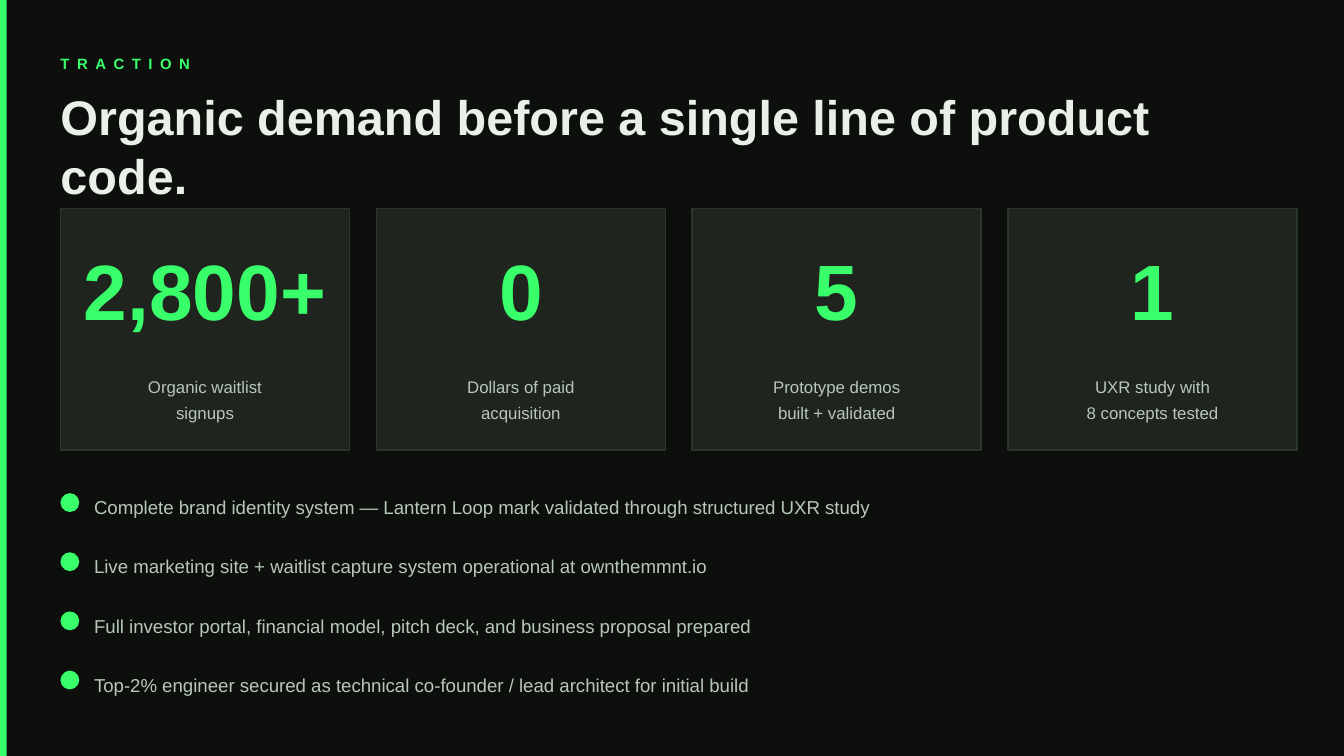
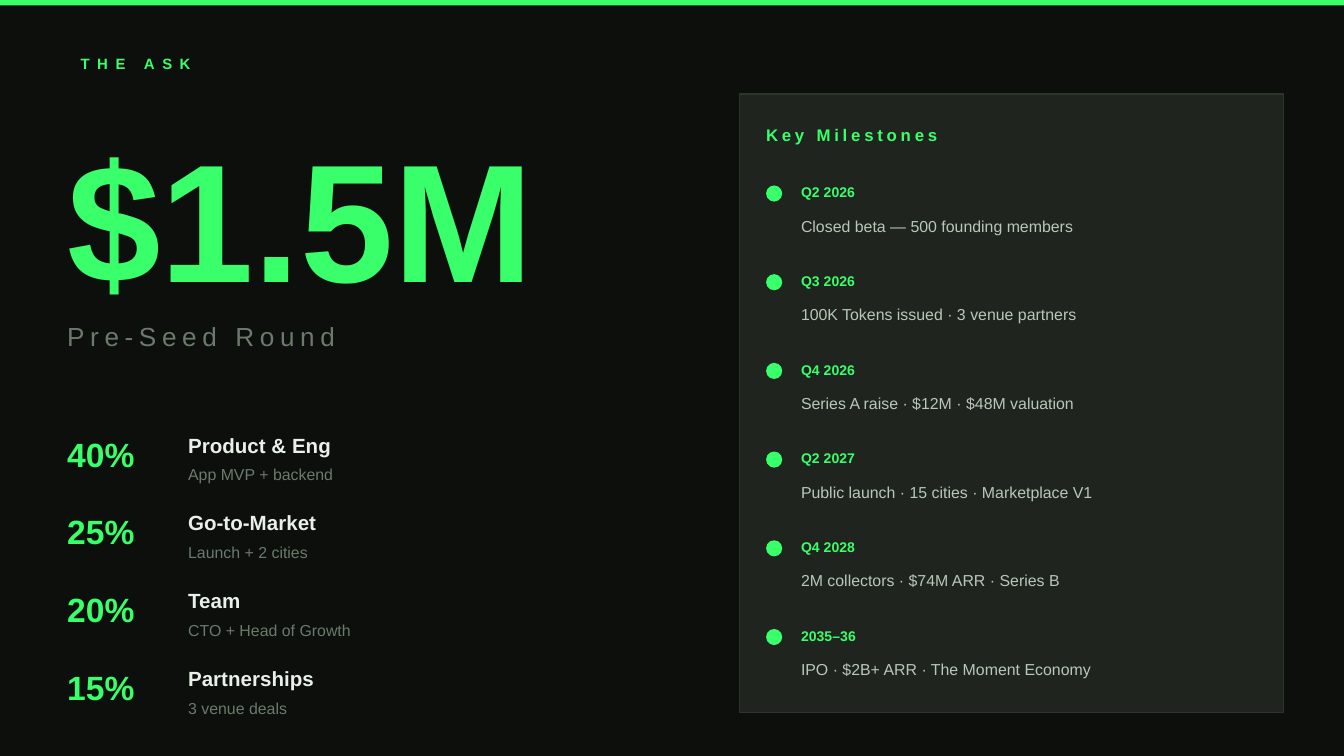
from pptx import Presentation
from pptx.dml.color import RGBColor
from pptx.enum.shapes import MSO_SHAPE
from pptx.enum.text import MSO_ANCHOR, MSO_AUTO_SIZE, PP_ALIGN
from pptx.util import Inches, Pt

NIGHT = RGBColor(0x0C, 0x0F, 0x0C)
PANEL = RGBColor(0x1F, 0x24, 0x1F)
EDGE = RGBColor(0x2A, 0x36, 0x2A)
GREEN = RGBColor(0x39, 0xFF, 0x6A)
WHITE = RGBColor(0xE8, 0xF0, 0xE8)
SAGE = RGBColor(0xB8, 0xC8, 0xB8)
MOSS = RGBColor(0x6B, 0x7A, 0x6B)

FONT = "Arial"
WIDE, HIGH = 100, 56.25
UNIT = Inches(10) / WIDE

STATS = [
    ("2,800+", "Organic waitlist\nsignups"),
    ("0", "Dollars of paid\nacquisition"),
    ("5", "Prototype demos\nbuilt + validated"),
    ("1", "UXR study with\n8 concepts tested"),
]
PROOFS = [
    "Complete brand identity system — Lantern Loop mark validated through structured UXR study",
    "Live marketing site + waitlist capture system operational at ownthemmnt.io",
    "Full investor portal, financial model, pitch deck, and business proposal prepared",
    "Top-2% engineer secured as technical co-founder / lead architect for initial build",
]
FUNDS = [
    ("40%", "Product & Eng", "App MVP + backend"),
    ("25%", "Go-to-Market", "Launch + 2 cities"),
    ("20%", "Team", "CTO + Head of Growth"),
    ("15%", "Partnerships", "3 venue deals"),
]
GOALS = [
    ("Q2 2026", "Closed beta — 500 founding members"),
    ("Q3 2026", "100K Tokens issued · 3 venue partners"),
    ("Q4 2026", "Series A raise · $12M · $48M valuation"),
    ("Q2 2027", "Public launch · 15 cities · Marketplace V1"),
    ("Q4 2028", "2M collectors · $74M ARR · Series B"),
    ("2035–36", "IPO · $2B+ ARR · The Moment Economy"),
]


def grid(*cells):
    """Turn grid cells into slide lengths."""
    return [round(cell * UNIT) for cell in cells]


def write(box, text, size, color, bold=False, track=0, align=PP_ALIGN.LEFT,
          anchor=MSO_ANCHOR.MIDDLE, lead=None):
    """Fill a box with text in one style."""
    frame = box.text_frame
    frame.text = text
    frame.word_wrap = True
    frame.auto_size = MSO_AUTO_SIZE.NONE
    frame.vertical_anchor = anchor
    frame.margin_left = frame.margin_right = 0
    frame.margin_top = frame.margin_bottom = 0
    for para in frame.paragraphs:
        para.alignment = align
        if lead:
            para.line_spacing = lead
        for run in para.runs:
            font = run.font
            font.name, font.size, font.bold = FONT, Pt(size), bold
            font.color.rgb = color
            if track:
                run._r.get_or_add_rPr().set("spc", str(track * 100))


def label(slide, cells, text, size, color, **style):
    """Add a text box."""
    write(slide.shapes.add_textbox(*grid(*cells)), text, size, color, **style)


def title(slide, cells, text, size, color, **style):
    """Place and style the slide title."""
    box = slide.shapes.title
    box.left, box.top, box.width, box.height = grid(*cells)
    write(box, text, size, color, bold=True, **style)


def block(slide, cells, fill=GREEN, edge=None, kind=MSO_SHAPE.RECTANGLE):
    """Add a flat filled shape."""
    shape = slide.shapes.add_shape(kind, *grid(*cells))
    shape.shadow.inherit = False
    shape.fill.solid()
    shape.fill.fore_color.rgb = fill
    if edge:
        shape.line.color.rgb = edge
        shape.line.width = Pt(0.75)
    else:
        shape.line.fill.background()


def dot(slide, left, top, size):
    """Add a round green marker."""
    block(slide, (left, top, size, size), kind=MSO_SHAPE.OVAL)


def card(slide, left, value, note):
    """Add a panel with a large figure and its caption."""
    block(slide, (left, 15.5, 21.5, 18), PANEL, EDGE)
    label(slide, (left + 1, 17, 19.5, 9), value, 42, GREEN, bold=True,
          align=PP_ALIGN.CENTER)
    label(slide, (left + 1, 26.5, 19.5, 6), note, 9, SAGE,
          align=PP_ALIGN.CENTER, lead=1.3)


def proof(slide, top, text):
    """Add a marked line of evidence."""
    dot(slide, 4.5, top + 0.7, 1.4)
    label(slide, (7, top, 89, 3.5), text, 10, SAGE)


def fund(slide, top, share, name, note):
    """Add one use of funds."""
    label(slide, (5, top, 8.5, 4.5), share, 18, GREEN, bold=True)
    label(slide, (14, top + 0.4, 25, 2.4), name, 11, WHITE, bold=True)
    label(slide, (14, top + 2.8, 25, 2), note, 8.5, MOSS)


def goal(slide, top, date, text):
    """Add one dated milestone."""
    dot(slide, 57, top + 0.8, 1.2)
    label(slide, (59.6, top, 8.5, 2.6), date, 7.5, GREEN, bold=True)
    label(slide, (59.6, top + 2.4, 34.5, 2.8), text, 8.5, SAGE)


def traction(slide):
    """Build the traction slide."""
    block(slide, (0, 0, 0.5, HIGH))
    label(slide, (4.5, 3.5, 80, 2.5), "TRACTION", 8, GREEN, bold=True, track=4)
    title(slide, (4.5, 6.5, 85, 7),
          "Organic demand before a single line of product code.", 26, WHITE,
          anchor=MSO_ANCHOR.TOP)
    for i, stat in enumerate(STATS):
        card(slide, 4.5 + 23.5 * i, *stat)
    for i, text in enumerate(PROOFS):
        proof(slide, 36 + 4.4 * i, text)


def ask(slide):
    """Build the funding slide."""
    block(slide, (0, 0, WIDE, 0.4))
    title(slide, (6, 3.5, 80, 2.5), "THE ASK", 8, GREEN, track=4)
    label(slide, (5, 8, 50, 16), "$1.5M", 90, GREEN, bold=True)
    label(slide, (5, 23, 50, 4), "Pre-Seed Round", 14, MOSS, track=3)
    for i, item in enumerate(FUNDS):
        fund(slide, 31.5 + 5.8 * i, *item)
    block(slide, (55, 7, 40.5, 46), PANEL, EDGE)
    label(slide, (57, 8.5, 37, 3), "Key Milestones", 9, GREEN, bold=True, track=2)
    for i, item in enumerate(GOALS):
        goal(slide, 13 + 6.6 * i, *item)


def main():
    """Build and save the deck."""
    deck = Presentation()
    deck.slide_width, deck.slide_height = grid(WIDE, HIGH)
    back = deck.slide_master.background.fill
    back.solid()
    back.fore_color.rgb = NIGHT
    layout = deck.slide_layouts.get_by_name("Title Only")
    for build in (traction, ask):
        build(deck.slides.add_slide(layout))
    deck.save("out.pptx")


if __name__ == "__main__":
    main()
